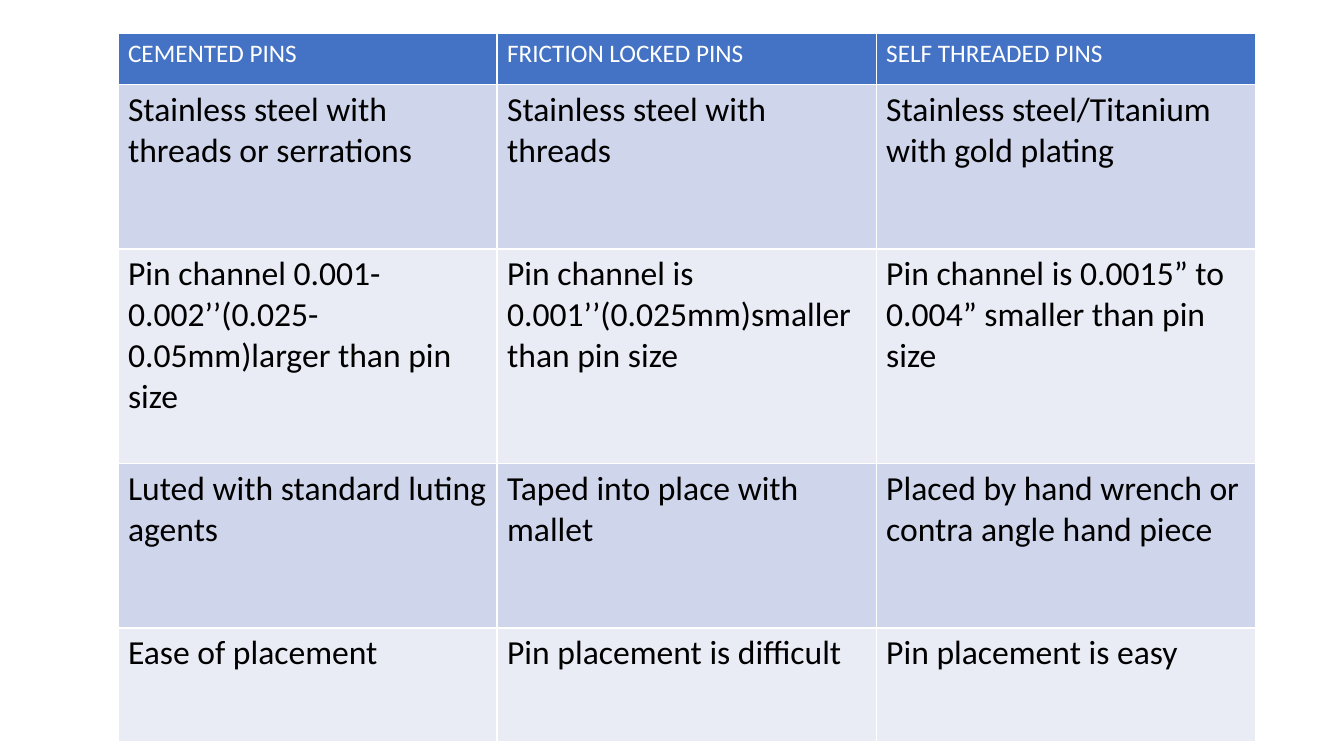
import pptx
import pptx.util
import pptx.dml.color

PIN_TYPES = ["CEMENTED PINS", "FRICTION LOCKED PINS", "SELF THREADED PINS"]
PROPERTIES = [
    ["Stainless steel with threads or serrations",
     "Stainless steel with threads",
     "Stainless steel/Titanium with gold plating"],
    ["Pin channel 0.001-0.002’’(0.025-0.05mm)larger than pin size",
     "Pin channel is 0.001’’(0.025mm)smaller than pin size",
     "Pin channel is 0.0015” to 0.004” smaller than pin size"],
    ["Luted with standard luting agents",
     "Taped into place with mallet",
     "Placed by hand wrench or contra angle hand piece"],
    ["Ease of placement",
     "Pin placement is difficult",
     "Pin placement is easy"],
]
COLORS = {
    "header": "4472C4",
    "header_text": "FFFFFF",
    "odd_row": "CFD5EA",
    "even_row": "E9EBF5",
    "text": "000000",
}
FONT = "Calibri"
LEFT, TOP = 1.17, 0.33
COLUMN_WIDTH = 3.76
ROW_HEIGHTS = [0.51, 1.63, 2.13, 1.63, 1.13]

Inches = pptx.util.Inches


def color(name):
    return pptx.dml.color.RGBColor.from_string(COLORS[name])


def fill_cell(cell, text, size, text_color, background):
    cell.fill.solid()
    cell.fill.fore_color.rgb = color(background)
    run = cell.text_frame.paragraphs[0].add_run()
    run.text = text
    run.font.name = FONT
    run.font.size = pptx.util.Pt(size)
    run.font.bold = False
    run.font.color.rgb = color(text_color)


def main():
    presentation = pptx.Presentation()
    presentation.slide_width = Inches(13.33)
    presentation.slide_height = Inches(7.5)
    slide = presentation.slides.add_slide(presentation.slide_layouts[6])

    rows = [PIN_TYPES] + PROPERTIES
    comparison = slide.shapes.add_table(
        len(rows), len(PIN_TYPES), Inches(LEFT), Inches(TOP),
        Inches(COLUMN_WIDTH * len(PIN_TYPES)), Inches(sum(ROW_HEIGHTS))).table

    for column in comparison.columns:
        column.width = Inches(COLUMN_WIDTH)
    for r, (texts, height) in enumerate(zip(rows, ROW_HEIGHTS)):
        comparison.rows[r].height = Inches(height)
        if r == 0:
            look = (18, "header_text", "header")
        else:
            look = (24, "text", "odd_row" if r % 2 else "even_row")
        for c, text in enumerate(texts):
            fill_cell(comparison.cell(r, c), text, *look)

    presentation.save("out.pptx")


if __name__ == "__main__":
    main()
